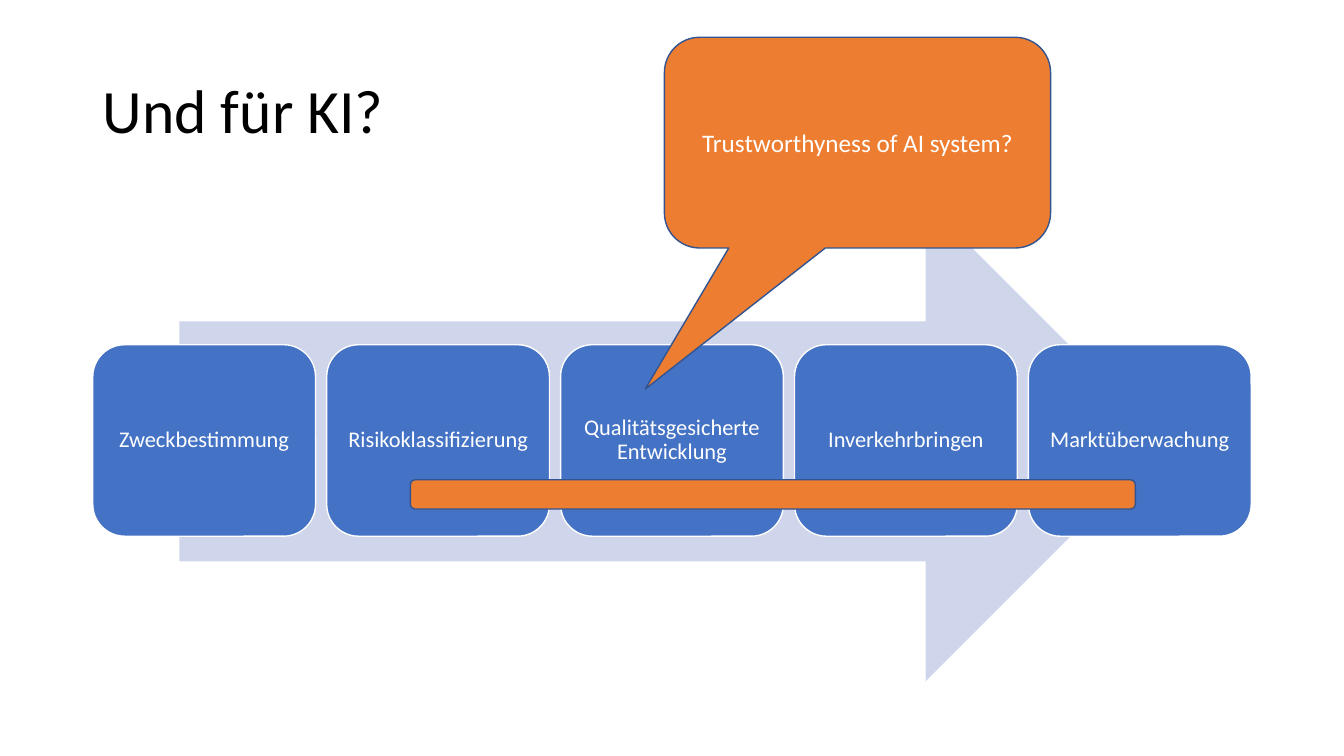
from dataclasses import dataclass

import pptx
import pptx.dml.color
import pptx.enum.shapes
import pptx.enum.text
import pptx.util

Inches = pptx.util.Inches
Shapes = pptx.enum.shapes.MSO_SHAPE
Align = pptx.enum.text.PP_ALIGN


@dataclass(frozen=True)
class Theme:
    font: str = "Calibri"
    title_color: str = "000000"
    light: str = "FFFFFF"
    arrow: str = "CFD5EA"
    step: str = "4472C4"
    accent: str = "ED7D31"
    outline: str = "325491"
    title_size: int = 44
    callout_size: int = 18
    step_size: int = 16


THEME = Theme()
STEPS = (
    "Zweckbestimmung",
    "Risikoklassifizierung",
    "Qualitätsgesicherte Entwicklung",
    "Inverkehrbringen",
    "Marktüberwachung",
)
STEP_LEFT, STEP_TOP, STEP_PITCH = 0.92, 3.42, 2.32
STEP_WIDTH, STEP_HEIGHT, STEP_INSET = 2.21, 1.9, 0.07


def rgb(color):
    return pptx.dml.color.RGBColor.from_string(color)


def write_text(shape, text, size, color, alignment, line_spacing=1.0):
    frame = shape.text_frame
    frame.text = text
    frame.word_wrap = True
    frame.auto_size = pptx.enum.text.MSO_AUTO_SIZE.NONE
    frame.vertical_anchor = pptx.enum.text.MSO_ANCHOR.MIDDLE
    paragraph = frame.paragraphs[0]
    paragraph.alignment = alignment
    paragraph.line_spacing = line_spacing
    font = paragraph.runs[0].font
    font.name = THEME.font
    font.size = pptx.util.Pt(size)
    font.color.rgb = rgb(color)


def add_title(slide, text):
    title = slide.shapes.title
    title.left, title.top = Inches(0.92), Inches(0.4)
    title.width, title.height = Inches(11.5), Inches(1.45)
    write_text(title, text, THEME.title_size, THEME.title_color, Align.LEFT, 0.9)


def add_filled_shape(slide, kind, box, fill, line=None):
    """Add a preset shape; box is left, top, width, height in inches."""
    shape = slide.shapes.add_shape(kind, *map(Inches, box))
    shape.shadow.inherit = False
    shape.fill.solid()
    shape.fill.fore_color.rgb = rgb(fill)
    if line:
        shape.line.color.rgb = rgb(line)
        shape.line.width = pptx.util.Pt(1)
    else:
        shape.line.fill.background()
    return shape


def add_step(slide, index, label):
    box = (STEP_LEFT + index * STEP_PITCH, STEP_TOP, STEP_WIDTH, STEP_HEIGHT)
    step = add_filled_shape(slide, Shapes.ROUNDED_RECTANGLE, box, THEME.step, THEME.light)
    write_text(step, label, THEME.step_size, THEME.light, Align.CENTER, 0.9)
    frame = step.text_frame
    frame.margin_left = frame.margin_right = Inches(STEP_INSET)
    frame.margin_top = frame.margin_bottom = Inches(STEP_INSET)


def add_callout(slide, text):
    callout = add_filled_shape(slide, Shapes.ROUNDED_RECTANGULAR_CALLOUT,
                               (6.59, 0.37, 3.83, 2.09), THEME.accent, THEME.outline)
    callout.adjustments[0] = -0.55
    callout.adjustments[1] = 1.17
    write_text(callout, text, THEME.callout_size, THEME.light, Align.CENTER)


def main():
    presentation = pptx.Presentation()
    presentation.slide_width, presentation.slide_height = Inches(13.33), Inches(7.5)
    title_only = presentation.slide_layouts.get_by_name("Title Only")
    slide = presentation.slides.add_slide(title_only)

    add_title(slide, "Und für KI?")
    add_filled_shape(slide, Shapes.RIGHT_ARROW, (1.78, 2, 9.78, 4.76), THEME.arrow)
    for index, label in enumerate(STEPS):
        add_step(slide, index, label)
    add_filled_shape(slide, Shapes.ROUNDED_RECTANGLE, (4.07, 4.76, 7.19, 0.29),
                     THEME.accent, THEME.outline)
    add_callout(slide, "Trustworthyness of AI system?")

    presentation.save("out.pptx")


if __name__ == "__main__":
    main()
